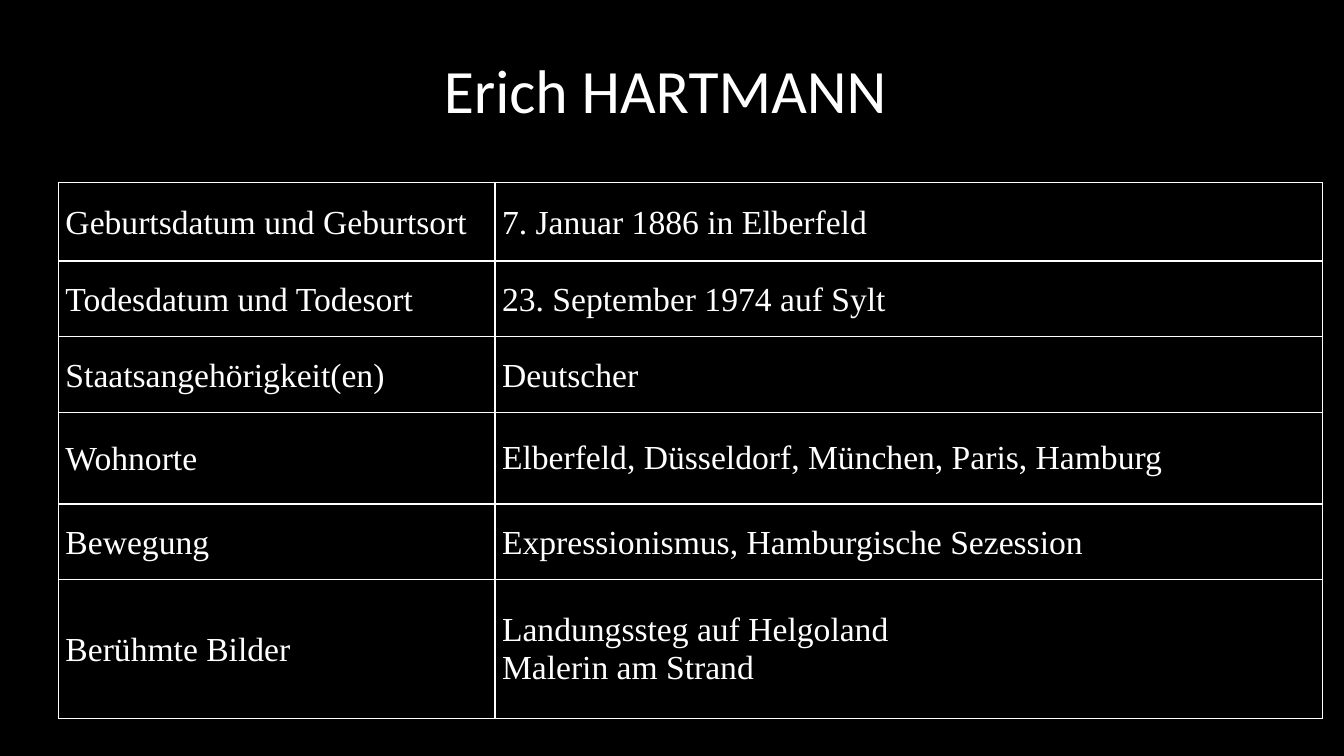
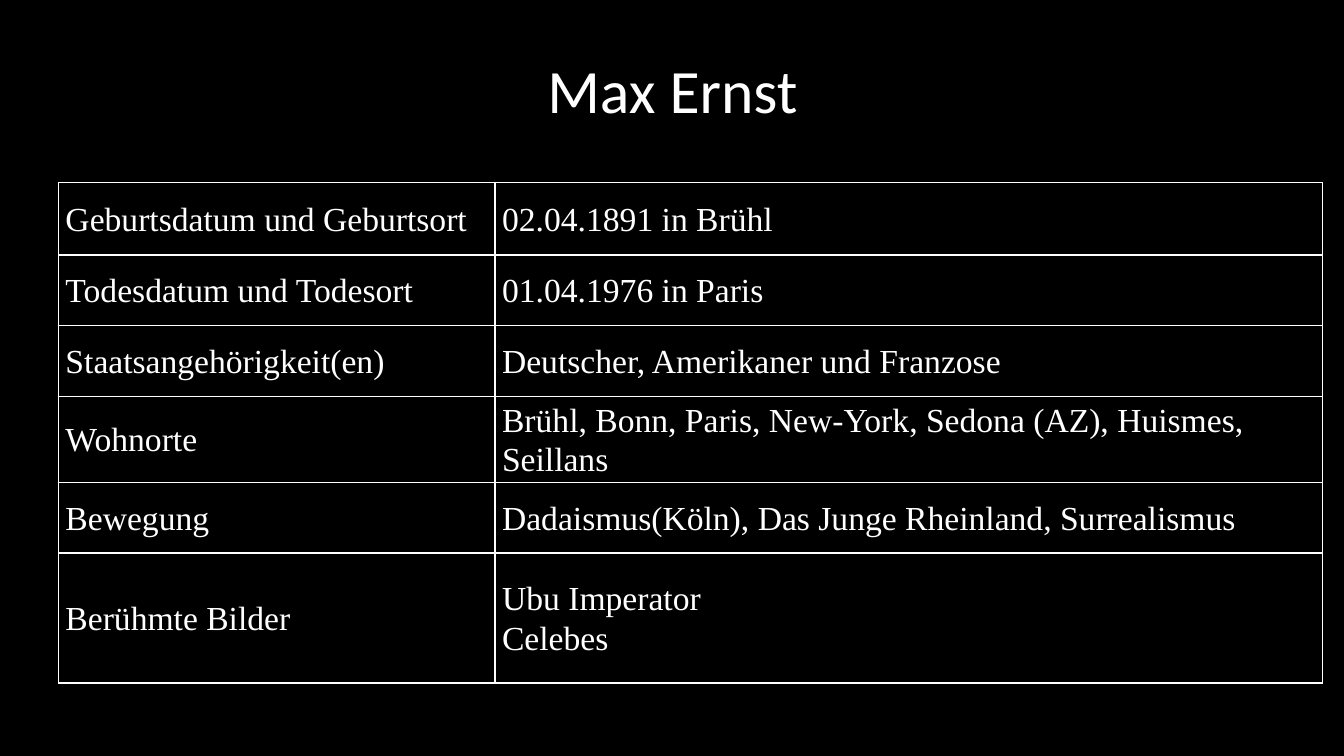
from dataclasses import dataclass

from lxml import etree
from pptx import Presentation
from pptx.dml.color import RGBColor
from pptx.enum import text
from pptx.oxml import ns
from pptx.util import Inches, Pt

COLORS = {"background": "000000", "ink": "FFFFFF"}
TITLE_FONT, TABLE_FONT = "Calibri", "Times New Roman"
LABELS = [
    "Geburtsdatum und Geburtsort",
    "Todesdatum und Todesort",
    "Staatsangehörigkeit(en)",
    "Wohnorte",
    "Bewegung",
    "Berühmte Bilder",
]
COLUMN_WIDTHS = [4.33, 8.21]
LINE_SPACING = 1.07


@dataclass
class Artist:
    name: str
    facts: list[str]
    row_heights: list[float]
    single_spaced: tuple[int, ...] = ()  # rows whose facts have plain line spacing


ARTISTS = [
    Artist(
        "Erich HARTMANN ",
        [
            "7. Januar 1886 in Elberfeld",
            "23. September 1974 auf Sylt",
            "Deutscher",
            "Elberfeld, Düsseldorf, München, Paris, Hamburg",
            "Expressionismus, Hamburgische Sezession",
            "Landungssteg auf Helgoland\nMalerin am Strand",
        ],
        [0.78, 0.75, 0.75, 0.91, 0.75, 1.38],
        single_spaced=(3, 5),
    ),
    Artist(
        "Max Ernst",
        [
            "02.04.1891 in Brühl",
            "01.04.1976 in Paris",
            "Deutscher, Amerikaner und Franzose",
            "Brühl, Bonn, Paris, New-York, Sedona (AZ), Huismes, Seillans",
            "Dadaismus(Köln), Das Junge Rheinland, Surrealismus",
            "Ubu Imperator\nCelebes",
        ],
        [0.72, 0.7, 0.7, 0.85, 0.7, 1.29],
    ),
]


def rgb(name: str) -> RGBColor:
    return RGBColor.from_string(COLORS[name])


def style_paragraphs(frame, font_name: str, size: float, spacing: float) -> None:
    for para in frame.paragraphs:
        para.line_spacing = spacing
        para.font.name = font_name
        para.font.size = Pt(size)
        para.font.color.rgb = rgb("ink")


def add_title(page, name: str) -> None:
    box = page.shapes.add_textbox(Inches(0.92), Inches(0.4), Inches(11.5), Inches(1.06))
    frame = box.text_frame
    frame.word_wrap = True
    frame.vertical_anchor = text.MSO_ANCHOR.MIDDLE
    frame.text = name
    frame.paragraphs[0].alignment = text.PP_ALIGN.CENTER
    style_paragraphs(frame, TITLE_FONT, 44, 0.9)


def set_borders(cell, widths: dict[str, float]) -> None:
    """Put the edge lines ahead of the cell's fill, as the schema asks."""
    properties = cell._tc.get_or_add_tcPr()
    for index, (edge, width) in enumerate(widths.items()):
        line = etree.Element(ns.qn(f"a:ln{edge}"), w=str(Pt(width)))
        fill = etree.SubElement(line, ns.qn("a:solidFill"))
        etree.SubElement(fill, ns.qn("a:srgbClr"), val=COLORS["ink"])
        properties.insert(index, line)


def fill_cell(cell, content: str, spacing: float, row: int) -> None:
    cell.fill.solid()
    cell.fill.fore_color.rgb = rgb("background")
    cell.vertical_anchor = text.MSO_ANCHOR.MIDDLE
    cell.margin_left = cell.margin_right = Inches(0.07)
    cell.margin_top = cell.margin_bottom = 0
    cell.text_frame.text = content
    style_paragraphs(cell.text_frame, TABLE_FONT, 24, spacing)
    # The rule under the first row is heavier
    set_borders(cell, {"L": 1, "R": 1, "T": 1.5 if row == 1 else 1, "B": 1.5 if row == 0 else 1})


def add_facts(page, artist: Artist) -> None:
    table = page.shapes.add_table(
        len(LABELS), len(COLUMN_WIDTHS), Inches(0.58), Inches(1.81),
        Inches(sum(COLUMN_WIDTHS)), Inches(sum(artist.row_heights)),
    ).table
    table.first_row = table.horz_banding = False
    for column, width in zip(table.columns, COLUMN_WIDTHS):
        column.width = Inches(width)
    for row, (label, fact) in enumerate(zip(LABELS, artist.facts)):
        table.rows[row].height = Inches(artist.row_heights[row])
        fact_spacing = 1.0 if row in artist.single_spaced else LINE_SPACING
        fill_cell(table.cell(row, 0), label, LINE_SPACING, row)
        fill_cell(table.cell(row, 1), fact, fact_spacing, row)


def main() -> None:
    deck = Presentation()
    deck.slide_width, deck.slide_height = Inches(13.33), Inches(7.5)

    # The master carries the shared background
    background = deck.slide_master.background.fill
    background.solid()
    background.fore_color.rgb = rgb("background")

    # One page per artist
    for artist in ARTISTS:
        page = deck.slides.add_slide(deck.slide_layouts[6])
        add_title(page, artist.name)
        add_facts(page, artist)
    deck.save("out.pptx")


if __name__ == "__main__":
    main()
